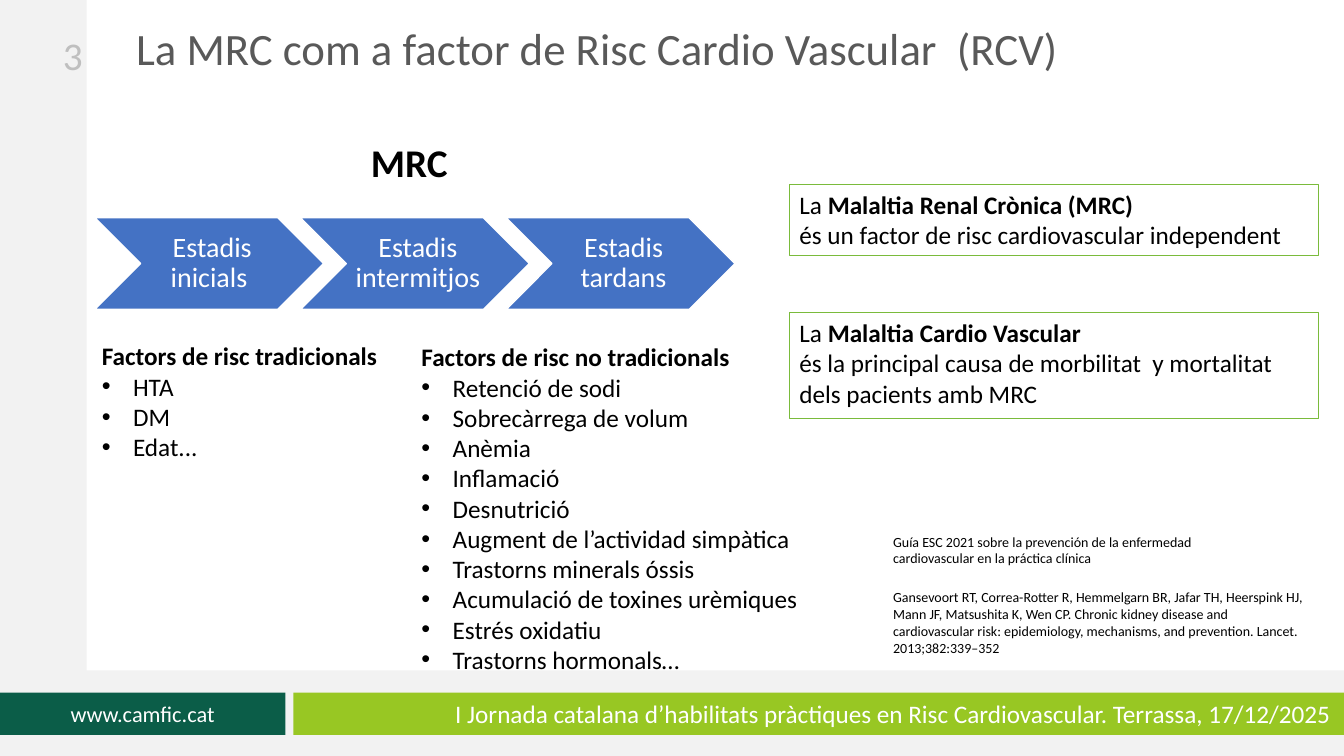
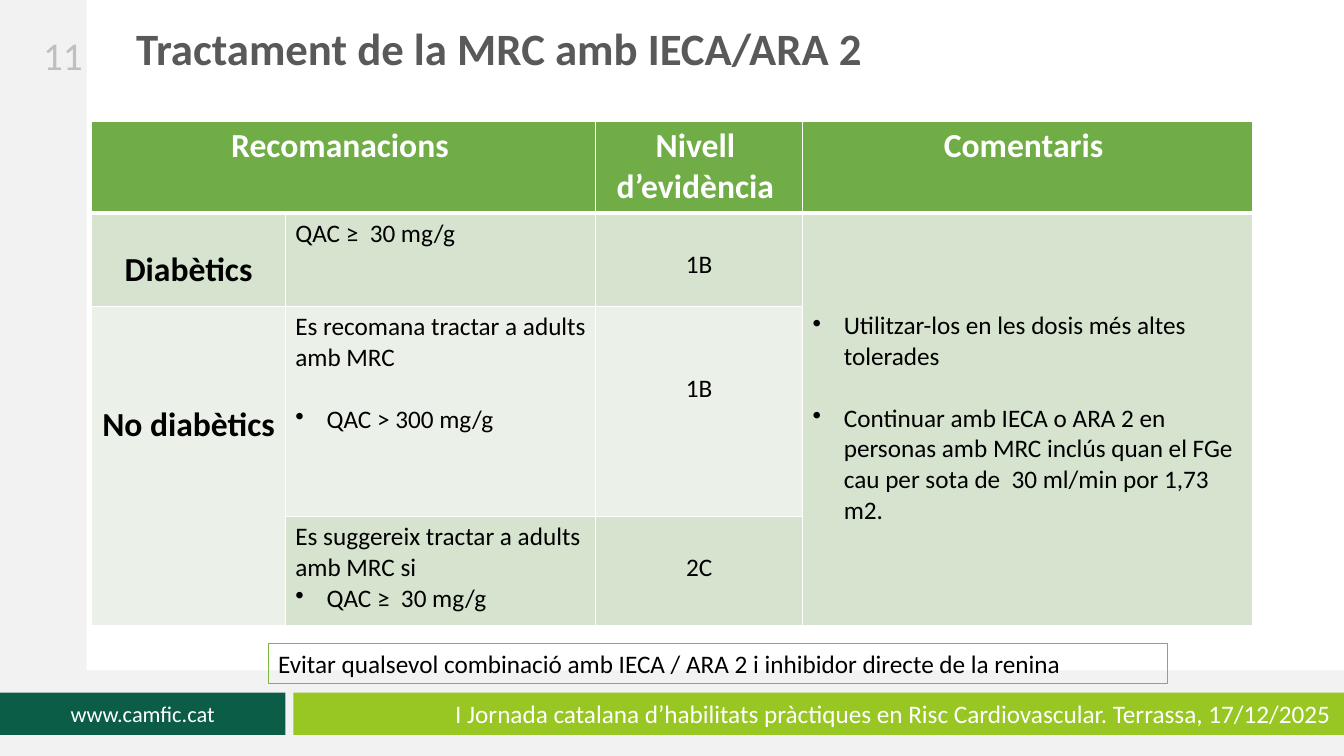
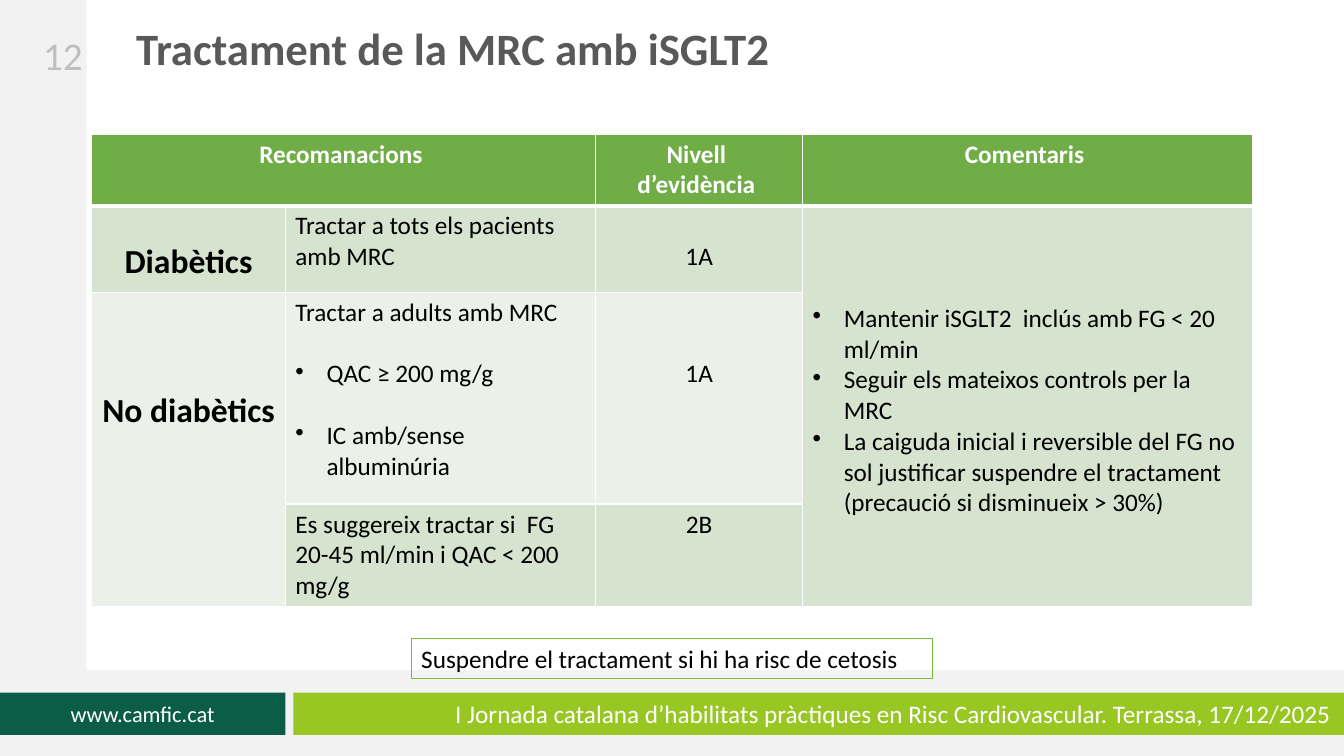
from dataclasses import dataclass

from lxml import etree
from pptx import Presentation
from pptx.dml.color import RGBColor
from pptx.enum.shapes import MSO_SHAPE
from pptx.enum.text import MSO_ANCHOR, MSO_AUTO_SIZE, PP_ALIGN
from pptx.oxml.ns import qn
from pptx.util import Pt

PX = 9144
PAGE_WIDTH, PAGE_HEIGHT = 1333, 750
TWO_LISTS, TITLE_ONLY = 3, 5
FONT = "Calibri"
LINE_GAP = 22

WHITE = RGBColor(0xFF, 0xFF, 0xFF)
BLACK = RGBColor(0x00, 0x00, 0x00)
BAND_GREY = RGBColor(0xF2, 0xF2, 0xF2)
BAND_LIME = RGBColor(0x98, 0xC7, 0x23)
BAND_GREEN = RGBColor(0x0B, 0x5D, 0x48)
TITLE_GREY = RGBColor(0x59, 0x59, 0x59)
NUMBER_GREY = RGBColor(0xBF, 0xBF, 0xBF)
STAGE_BLUE = RGBColor(0x44, 0x72, 0xC4)
FRAME_GREEN = RGBColor(0x7A, 0xBB, 0x3B)
HEADER_GREEN = RGBColor(0x70, 0xAD, 0x47)
ROW_DARK = RGBColor(0xD5, 0xE3, 0xCF)
ROW_LIGHT = RGBColor(0xEB, 0xF1, 0xE9)
ROW_FILLS = [HEADER_GREEN, ROW_DARK, ROW_LIGHT, ROW_DARK]

LEFT, CENTER, RIGHT = PP_ALIGN.LEFT, PP_ALIGN.CENTER, PP_ALIGN.RIGHT
TOP, MIDDLE = MSO_ANCHOR.TOP, MSO_ANCHOR.MIDDLE
NO_FIT = MSO_AUTO_SIZE.NONE
RECTANGLE, CHEVRON = MSO_SHAPE.RECTANGLE, MSO_SHAPE.CHEVRON


@dataclass
class Line:
    text: str
    bullet: bool = False
    bold: bool = False
    gap: int = 0
    lead: str = ""


@dataclass
class Cell:
    lines: list
    size: int = 18
    align: int = LEFT
    top: int = 5


def emu(*lengths):
    return [length * PX for length in lengths]


def set_bullet(para, bullet):
    properties = para._p.get_or_add_pPr()
    indent = 31 * PX if bullet else 0
    properties.set("marL", str(indent))
    properties.set("indent", str(-indent))
    if bullet:
        etree.SubElement(properties, qn("a:buChar")).set("char", "•")
    else:
        etree.SubElement(properties, qn("a:buNone"))


def write(frame, lines, size, color=BLACK, align=LEFT, anchor=TOP, spacing=1.0):
    frame.word_wrap = True
    frame.auto_size = NO_FIT
    frame.vertical_anchor = anchor
    write_lines(frame, lines, size, color, align, spacing)


def write_lines(frame, lines, size, color, align, spacing=1.0):
    for index, line in enumerate(lines):
        para = frame.add_paragraph() if index else frame.paragraphs[0]
        set_bullet(para, line.bullet)
        para.alignment = align
        para.line_spacing = spacing
        para.space_before = Pt(line.gap)
        para.font.name = FONT
        para.font.size = Pt(size)
        para.font.color.rgb = color
        if line.lead:
            lead = para.add_run()
            lead.text = line.lead
            lead.font.bold = False
            span = para.add_run()
            span.text = line.text
            span.font.bold = line.bold
        else:
            para.font.bold = line.bold
            para.add_run().text = line.text


def add_box(page, kind, place, fill=None, line=None, line_width=0.75):
    box = page.shapes.add_shape(kind, *emu(*place))
    box.shadow.inherit = False
    if fill is None:
        box.fill.background()
    else:
        box.fill.solid()
        box.fill.fore_color.rgb = fill
    if line is None:
        box.line.fill.background()
    else:
        box.line.color.rgb = line
        box.line.width = Pt(line_width)
    return box


def add_text(page, place, lines, size, **style):
    box = page.shapes.add_textbox(*emu(*place))
    write(box.text_frame, lines, size, **style)


def add_callout(page, place, lines):
    box = add_box(page, RECTANGLE, place, line=FRAME_GREEN)
    write(box.text_frame, lines, 18)


def fill_placeholder(holder, place, lines, size, **style):
    holder.left, holder.top, holder.width, holder.height = emu(*place)
    write(holder.text_frame, lines, size, **style)


def add_master_bands(deck, page):
    side = add_box(page, RECTANGLE, (0, 0, 86, PAGE_HEIGHT), BAND_GREY)
    base = add_box(page, RECTANGLE, (0, 665, PAGE_WIDTH, 85), BAND_GREY)
    site = add_box(page, RECTANGLE, (0, 687, 283, 42), BAND_GREEN)
    write(site.text_frame, [Line("www.camfic.cat")], 16, WHITE, CENTER, MIDDLE)
    event = add_box(page, RECTANGLE, (291, 687, PAGE_WIDTH - 291, 42), BAND_LIME)
    event.text_frame.margin_right = 13 * PX
    write(event.text_frame, [Line(
        "I Jornada catalana d’habilitats pràctiques en Risc Cardiovascular. "
        "Terrassa, 17/12/2025")], 18, WHITE, RIGHT, MIDDLE)
    for band in (side, base, site, event):
        deck.slide_master.shapes.element.append(band.element)


def add_page(deck, layout, number, title, bold=True):
    page = deck.slides.add_slide(deck.slide_layouts[layout])
    fill_placeholder(page.shapes.title, (125, 22, 992, 48),
                     [Line(title, bold=bold)], 32, color=TITLE_GREY, spacing=0.9)
    add_text(page, (0, 17, 92, 75), [Line(number)], 28,
             color=NUMBER_GREY, align=RIGHT, anchor=MIDDLE)
    return page


def add_stages(page, place, labels):
    left, top, width, height = place
    step = 204
    for index, label in enumerate(labels):
        stage = add_box(page, CHEVRON, (left + index * step, top, width, height),
                        STAGE_BLUE, WHITE, 1)
        frame = stage.text_frame
        frame.margin_left = 9 * PX
        frame.margin_top = frame.margin_right = frame.margin_bottom = 3 * PX
        write(frame, [Line(label)], 20, WHITE, CENTER, MIDDLE, 0.9)


def set_borders(cell, row):
    properties = cell._tc.get_or_add_tcPr()
    widths = {"lnL": 1, "lnR": 1,
              "lnT": 3 if row == 1 else 1, "lnB": 3 if row == 0 else 1}
    for edge, width in widths.items():
        line = etree.SubElement(properties, qn("a:" + edge))
        line.set("w", str(Pt(width)))
        fill = etree.SubElement(line, qn("a:solidFill"))
        etree.SubElement(fill, qn("a:srgbClr")).set("val", str(WHITE))


def add_advice_table(page, left, top, heights, header_size, body):
    widths = [192, 308, 205, 446]
    frame = page.shapes.add_table(
        len(heights), len(widths), *emu(left, top, sum(widths), sum(heights)))
    table = frame.table
    table.horz_banding = False
    for column, width in zip(table.columns, widths):
        column.width = width * PX
    for row, height in zip(table.rows, heights):
        row.height = height * PX
    for row, fill in enumerate(ROW_FILLS):
        for column in range(len(widths)):
            cell = table.cell(row, column)
            set_borders(cell, row)
            cell.fill.solid()
            cell.fill.fore_color.rgb = fill
    table.cell(0, 0).merge(table.cell(0, 1))
    table.cell(2, 0).merge(table.cell(3, 0))
    table.cell(1, 3).merge(table.cell(3, 3))
    headers = {0: ["Recomanacions "], 2: ["Nivell ", "d’evidència "],
               3: ["Comentaris "]}
    for column, texts in headers.items():
        write_lines(table.cell(0, column).text_frame,
                    [Line(text, bold=True) for text in texts],
                    header_size, WHITE, CENTER)
    groups = {(1, 0): Cell([Line("Diabètics", bold=True)], 24, CENTER, 36),
              (2, 0): Cell([Line("No diabètics ", bold=True)], 24, CENTER, 97)}
    for (row, column), content in {**groups, **body}.items():
        cell = table.cell(row, column)
        cell.margin_top = content.top * PX
        write_lines(cell.text_frame, content.lines, content.size, BLACK, content.align)


def level(text, top):
    return Cell([Line(text)], align=CENTER, top=top)


def bullets(*texts):
    return [Line(text, bullet=True) for text in texts]


def build_risk_page(deck):
    page = add_page(deck, TWO_LISTS, "3",
                    "La MRC com a factor de Risc Cardio Vascular  (RCV)", bold=False)
    add_master_bands(deck, page)
    add_text(page, (358, 132, 110, 57), [Line("MRC", bold=True)], 28)
    add_stages(page, (94, 216, 227, 91),
               ["Estadis inicials ", "Estadis intermitjos ", "Estadis tardans"])
    fill_placeholder(
        page.placeholders[1], (91, 333, 300, 131),
        [Line("Factors de risc tradicionals", bold=True),
         *bullets("HTA", "DM", "Edat...")], 18)
    fill_placeholder(
        page.placeholders[2], (408, 334, 673, 343),
        [Line("Factors de risc no tradicionals", bold=True),
         *bullets("Retenció de sodi", "Sobrecàrrega de volum", "Anèmia",
                  "Inflamació", "Desnutrició", "Augment de l’actividad simpàtica",
                  "Trastorns minerals óssis", "Acumulació de toxines urèmiques",
                  "Estrés oxidatiu", "Trastorns hormonals…")], 18)
    add_callout(page, (783, 183, 525, 71), [
        Line("Malaltia Renal Crònica (MRC)", bold=True, lead="La "),
        Line("és un factor de risc cardiovascular independent ")])
    add_callout(page, (783, 310, 525, 105), [
        Line("Malaltia Cardio Vascular", bold=True, lead="La "),
        Line("és la principal causa de morbilitat  y mortalitat dels pacients amb MRC")])
    add_text(page, (876, 524, 398, 44), [Line(
        "Guía ESC 2021 sobre la prevención de la enfermedad cardiovascular "
        "en la práctica clínica")], 10)
    add_text(page, (876, 579, 429, 77), [Line(
        "Gansevoort RT, Correa-Rotter R, Hemmelgarn BR, Jafar TH, Heerspink HJ, "
        "Mann JF, Matsushita K, Wen CP. Chronic kidney disease and cardiovascular "
        "risk: epidemiology, mechanisms, and prevention. Lancet. "
        "2013;382:339–352")], 10)


def build_inhibitor_page(deck):
    page = add_page(deck, TITLE_ONLY, "11", "Tractament de la MRC amb IECA/ARA 2")
    add_advice_table(page, 91, 120, [90, 93, 208, 108], 24, {
        (1, 1): Cell([Line("QAC ≥  30 mg/g")]),
        (1, 2): level("1B", 36),
        (1, 3): Cell([
            Line("Utilitzar-los en les dosis més altes tolerades", bullet=True),
            Line("Continuar amb IECA o ARA 2 en personas amb MRC inclús quan el FGe "
                 "cau per sota de  30 ml/min por 1,73 m2.",
                 bullet=True, gap=LINE_GAP)], top=97),
        (2, 1): Cell([Line("Es recomana tractar a adults amb MRC"),
                      Line("QAC > 300 mg/g", bullet=True, gap=LINE_GAP)]),
        (2, 2): level("1B", 66),
        (3, 1): Cell([Line("Es suggereix tractar a adults amb MRC si"),
                      *bullets("QAC ≥  30 mg/g")]),
        (3, 2): level("2C", 36),
    })
    add_callout(page, (266, 638, 892, 40), [Line(
        "Evitar qualsevol combinació amb IECA / ARA 2 i inhibidor directe "
        "de la renina")])


def build_gliflozin_page(deck):
    page = add_page(deck, TITLE_ONLY, "12", "Tractament de la MRC amb iSGLT2")
    add_advice_table(page, 91, 133, [70, 86, 210, 101], 18, {
        (1, 1): Cell([Line("Tractar a tots els pacients amb MRC")]),
        (1, 2): level("1A", 36),
        (1, 3): Cell(bullets(
            "Mantenir iSGLT2  inclús amb FG < 20 ml/min",
            "Seguir els mateixos controls per la MRC",
            "La caiguda inicial i reversible del FG no sol justificar suspendre "
            "el tractament (precaució si disminueix > 30%)"), top=97),
        (2, 1): Cell([Line("Tractar a adults amb MRC"),
                      Line("QAC ≥ 200 mg/g", bullet=True, gap=LINE_GAP),
                      Line("IC amb/sense albuminúria", bullet=True, gap=LINE_GAP)]),
        (2, 2): level("1A", 66),
        (3, 1): Cell([Line("Es suggereix tractar si  FG 20-45 ml/min i QAC < 200 mg/g")]),
        (3, 2): level("2B", 5),
    })
    add_callout(page, (408, 633, 517, 40),
                [Line("Suspendre el tractament si hi ha risc de cetosis")])


def main():
    deck = Presentation()
    deck.slide_width, deck.slide_height = emu(PAGE_WIDTH, PAGE_HEIGHT)
    build_risk_page(deck)
    build_inhibitor_page(deck)
    build_gliflozin_page(deck)
    deck.save("out.pptx")


if __name__ == "__main__":
    main()
